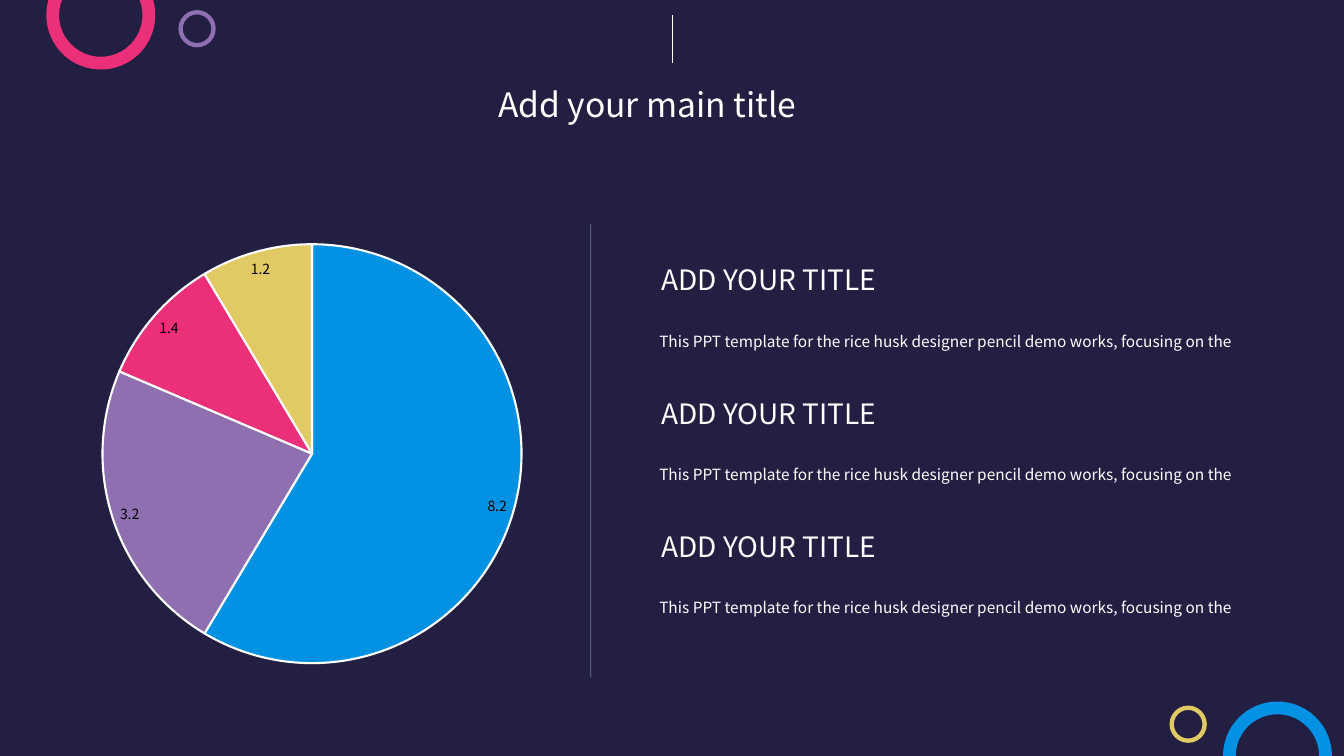
import pptx
import pptx.chart.data
import pptx.dml.color
import pptx.enum.chart
import pptx.enum.shapes
import pptx.enum.text
import pptx.oxml.ns
import pptx.oxml.xmlchemy
import pptx.util
from pptx.util import Inches

FONT = "Noto Sans CJK SC"
COLORS = {
    "navy": "221F42",
    "white": "FFFFFF",
    "black": "000000",
    "blue": "0392E3",
    "purple": "8E6FB0",
    "pink": "EB3079",
    "yellow": "E1C963",
}
HEADING = "ADD YOUR TITLE"
DETAIL = "This PPT template for the rice husk designer pencil demo works, focusing on the"


def rgb(name):
    return pptx.dml.color.RGBColor.from_string(COLORS[name])


def make_element(tag):
    return pptx.oxml.xmlchemy.OxmlElement(tag)


def format_font(font, size, color):
    font.name = FONT
    font.size = pptx.util.Pt(size)
    font.color.rgb = rgb(color)


def write_text(shape, text, size, alignment, line_spacing=None):
    text_frame = shape.text_frame
    text_frame.text = text
    text_frame.word_wrap = True
    text_frame.auto_size = pptx.enum.text.MSO_AUTO_SIZE.SHAPE_TO_FIT_TEXT
    text_frame.vertical_anchor = pptx.enum.text.MSO_ANCHOR.TOP
    paragraph = text_frame.paragraphs[0]
    paragraph.alignment = alignment
    paragraph.line_spacing = line_spacing
    format_font(paragraph.runs[0].font, size, "white")


def add_title(slide, text):
    title = slide.shapes.title
    title.left, title.top = Inches(4.55), Inches(0.78)
    title.width, title.height = Inches(3.74), Inches(0.5)
    write_text(title, text, 24, pptx.enum.text.PP_ALIGN.CENTER, 1.0)


def add_ring(slide, left, top, size, color):
    ring = slide.shapes.add_shape(
        pptx.enum.shapes.MSO_SHAPE.DONUT,
        Inches(left), Inches(top), Inches(size), Inches(size))
    ring.adjustments[0] = 0.117
    ring.shadow.inherit = False
    ring.fill.solid()
    ring.fill.fore_color.rgb = rgb(color)
    ring.line.fill.background()


def add_vertical_line(slide, x, top, bottom, opacity=100):
    line = slide.shapes.add_connector(
        pptx.enum.shapes.MSO_CONNECTOR.STRAIGHT,
        Inches(x), Inches(top), Inches(x), Inches(bottom))
    line.line.width = pptx.util.Pt(0.5)
    line.line.color.rgb = rgb("white")
    properties = line._element.spPr
    if opacity < 100:
        color = properties.find(".//" + pptx.oxml.ns.qn("a:srgbClr"))
        alpha = make_element("a:alpha")
        alpha.set("val", str(opacity * 1000))
        color.append(alpha)
    properties.append(make_element("a:effectLst"))


def set_plot_layout(chart, **fractions):
    plot_area = chart._chartSpace.chart.plotArea
    for old_layout in plot_area.findall(pptx.oxml.ns.qn("c:layout")):
        plot_area.remove(old_layout)
    layout = make_element("c:layout")
    manual = make_element("c:manualLayout")
    settings = {"layoutTarget": "inner", "xMode": "edge", "yMode": "edge", **fractions}
    for name, value in settings.items():
        setting = make_element("c:" + name)
        setting.set("val", str(value))
        manual.append(setting)
    layout.append(manual)
    plot_area.insert(0, layout)


def add_pie(slide, values, slice_colors):
    data = pptx.chart.data.CategoryChartData()
    data.categories = [str(number) for number in range(1, len(values) + 1)]
    data.add_series("Series 1", values)
    chart = slide.shapes.add_chart(
        pptx.enum.chart.XL_CHART_TYPE.PIE,
        Inches(-0.91), Inches(2.05), Inches(8.01), Inches(4.67), data).chart
    chart.has_title = False
    chart.has_legend = False
    format_font(chart.font, 10, "black")
    set_plot_layout(chart, x=0.24, y=0.08, w=0.52, h=0.89)
    plot = chart.plots[0]
    plot.vary_by_categories = True
    plot.has_data_labels = True
    labels = plot.data_labels
    labels.show_value = True
    labels.show_percentage = False
    labels.position = pptx.enum.chart.XL_LABEL_POSITION.BEST_FIT
    format_font(labels.font, 10, "black")
    for index, color in enumerate(slice_colors):
        slice_format = plot.series[0].points[index].format
        slice_format.fill.solid()
        slice_format.fill.fore_color.rgb = rgb(color)
        slice_format.line.color.rgb = rgb("white")
        slice_format.line.width = pptx.util.Pt(1.5)


def add_text_block(slide, top):
    heading = slide.shapes.add_textbox(
        Inches(6.37), Inches(top), Inches(2.51), Inches(0.44))
    write_text(heading, HEADING, 20, pptx.enum.text.PP_ALIGN.CENTER)
    detail = slide.shapes.add_textbox(
        Inches(6.44), Inches(top + 0.59), Inches(6.62), Inches(0.35))
    write_text(detail, DETAIL, 11, pptx.enum.text.PP_ALIGN.LEFT, 1.5)


def main():
    presentation = pptx.Presentation()
    presentation.slide_width = Inches(13.33)
    presentation.slide_height = Inches(7.5)
    slide = presentation.slides.add_slide(presentation.slide_layouts[5])
    slide.background.fill.solid()
    slide.background.fill.fore_color.rgb = rgb("navy")

    add_vertical_line(slide, 6.67, 0.15, 0.63)
    add_title(slide, "Add your main title")
    add_ring(slide, 0.46, -0.39, 1.08, "pink")
    add_ring(slide, 12.13, 6.96, 1.08, "blue")
    add_ring(slide, 1.77, 0.1, 0.37, "purple")
    add_ring(slide, 11.6, 7, 0.37, "yellow")
    add_pie(slide, (8.2, 3.2, 1.4, 1.2), ("blue", "purple", "pink", "yellow"))
    add_vertical_line(slide, 5.86, 2.22, 6.72, opacity=40)
    for row in range(3):
        add_text_block(slide, 2.56 + row * 1.32)

    presentation.save("out.pptx")


if __name__ == "__main__":
    main()
